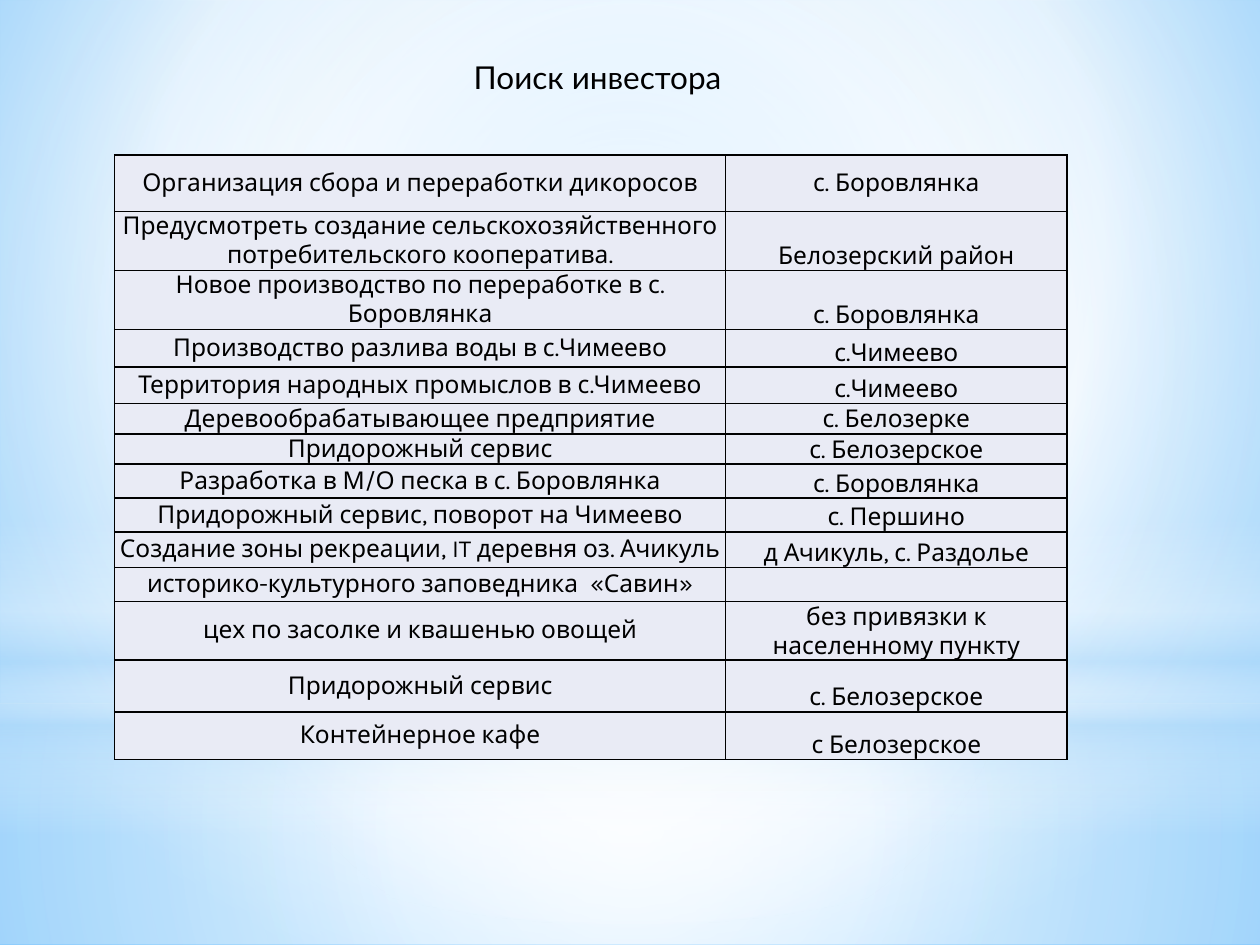
from lxml import etree
from pptx import Presentation
from pptx.dml.color import RGBColor
from pptx.enum.shapes import MSO_SHAPE
from pptx.enum.text import MSO_ANCHOR, MSO_AUTO_SIZE, PP_ALIGN
from pptx.oxml.ns import qn
from pptx.util import Pt

RECTANGLE, OVAL = MSO_SHAPE.RECTANGLE, MSO_SHAPE.OVAL
TOP, MIDDLE, BOTTOM = MSO_ANCHOR.TOP, MSO_ANCHOR.MIDDLE, MSO_ANCHOR.BOTTOM
LEFT, CENTER = PP_ALIGN.LEFT, PP_ALIGN.CENTER
FIT_SHAPE = MSO_AUTO_SIZE.SHAPE_TO_FIT_TEXT
TITLE_ONLY = 5

WIDTH, HEIGHT = 720, 540
HORIZON = 402
MIDPOINT = (50, 50, 50, 50)
WHITE, SKY = "FFFFFF", "B4DCFA"

# Project, place, row height
PROJECTS = [
    ("Организация сбора и переработки дикоросов", "с. Боровлянка", 32.4),
    ("Предусмотреть создание сельскохозяйственного потребительского кооператива.",
     "Белозерский район", 25.2),
    ("Новое производство по переработке в с. Боровлянка", "с. Боровлянка", 20.9),
    ("Производство разлива воды в с.Чимеево", "с.Чимеево", 21.6),
    ("Территория народных промыслов в с.Чимеево", "с.Чимеево", 20.9),
    ("Деревообрабатывающее предприятие", "с. Белозерке", 17.3),
    ("Придорожный сервис", "с. Белозерское", 17.3),
    ("Разработка в М/О песка в с. Боровлянка", "с. Боровлянка", 19.4),
    ("Придорожный сервис, поворот на Чимеево", "с. Першино", 19.4),
    ("Создание зоны рекреации, IT деревня оз. Ачикуль", "д Ачикуль, с. Раздолье", 20.2),
    ("историко-культурного заповедника  «Савин»", "", 19.4),
    ("цех по засолке и квашенью овощей", "без привязки к населенному пункту", 22.3),
    ("Придорожный сервис", "с. Белозерское", 29.5),
    ("Контейнерное кафе", "с Белозерское", 27.4),
]


def color(value):
    return RGBColor.from_string(value)


def add_element(parent, tag, **attributes):
    element = etree.SubElement(parent, qn(tag))
    for name, value in attributes.items():
        element.set(name, str(value))
    return element


class SlideBuilder:
    title_font, title_size = "Lato", 18
    cell_font, cell_size = "Karla", 14
    ink, cell_fill = "000000", "E9EBF5"

    def __init__(self, slide):
        self.slide = slide

    def format_text(self, paragraph, font, size, alignment):
        paragraph.alignment = alignment
        for run in paragraph.runs:
            run.font.name = font
            run.font.size = Pt(size)
            run.font.color.rgb = color(self.ink)

    def gradient(self, fill, owner, stops, center=None):
        """Stops are (position, colour, opacity) in percent; no center means top to bottom."""
        fill.solid()
        fill.fore_color.rgb = color(WHITE)
        solid = owner.find(".//" + qn("a:solidFill"))
        gradient = etree.Element(qn("a:gradFill"), rotWithShape="1")
        stop_list = add_element(gradient, "a:gsLst")
        for position, value, opacity in stops:
            stop = add_element(stop_list, "a:gs", pos=position * 1000)
            stop_color = add_element(stop, "a:srgbClr", val=value)
            if opacity < 100:
                add_element(stop_color, "a:alpha", val=opacity * 1000)
        if center:
            circle = add_element(gradient, "a:path", path="circle")
            sides = {side: share * 1000 for side, share in zip("ltrb", center)}
            add_element(circle, "a:fillToRect", **sides)
        else:
            add_element(gradient, "a:lin", ang=90 * 60000, scaled=0)
        solid.getparent().replace(solid, gradient)

    def background(self, stops, center):
        self.gradient(self.slide.background.fill, self.slide.element, stops, center)

    def glow(self, kind, top, height, stops, center=None):
        shape = self.slide.shapes.add_shape(kind, 0, Pt(top), Pt(WIDTH), Pt(height))
        shape.shadow.inherit = False
        shape.line.fill.background()
        self.gradient(shape.fill, shape.element, stops, center)

    def title(self, text, left, top, width, height):
        title = self.slide.shapes.title
        title.left, title.top, title.width, title.height = map(Pt, (left, top, width, height))
        frame = title.text_frame
        frame.text = text
        frame.word_wrap = False
        frame.auto_size = FIT_SHAPE
        frame.vertical_anchor = TOP
        self.format_text(frame.paragraphs[0], self.title_font, self.title_size, LEFT)
        # Bring the title in front of the glows
        title.element.getparent().append(title.element)

    def cell(self, cell, text, anchor):
        cell.text = text
        cell.vertical_anchor = anchor
        cell.margin_left = cell.margin_right = cell.margin_top = cell.margin_bottom = 0
        paragraph = cell.text_frame.paragraphs[0]
        self.format_text(paragraph, self.cell_font, self.cell_size, CENTER)
        if not text:
            add_element(paragraph._p, "a:endParaRPr", sz=self.cell_size * 100)
        # Borders come before the fill in the cell properties
        properties = cell._tc.get_or_add_tcPr()
        for side in ("a:lnL", "a:lnR", "a:lnT", "a:lnB"):
            line = add_element(properties, side, w=Pt(1))
            add_element(add_element(line, "a:solidFill"), "a:srgbClr", val=self.ink)
        cell.fill.solid()
        cell.fill.fore_color.rgb = color(self.cell_fill)

    def table(self, rows, left, top, column_widths):
        height = sum(row[-1] for row in rows)
        frame = self.slide.shapes.add_table(
            len(rows), len(column_widths), Pt(left), Pt(top), Pt(sum(column_widths)), Pt(height))
        table = frame.table
        table.first_row = table.horz_banding = False
        for column, width in zip(table.columns, column_widths):
            column.width = Pt(width)
        for index, (project, place, row_height) in enumerate(rows):
            table.rows[index].height = Pt(row_height)
            self.cell(table.cell(index, 0), project, MIDDLE)
            self.cell(table.cell(index, 1), place, BOTTOM if index else MIDDLE)


def main():
    presentation = Presentation()
    presentation.slide_width, presentation.slide_height = Pt(WIDTH), Pt(HEIGHT)
    slide = presentation.slides.add_slide(presentation.slide_layouts[TITLE_ONLY])
    builder = SlideBuilder(slide)

    # Sky background with soft glows
    builder.background([(0, "9ED5FF", 100), (60, WHITE, 100), (100, "5BB9FF", 100)],
                       (20, 10, 20, 60))
    builder.glow(RECTANGLE, HORIZON, HEIGHT - HORIZON,
                 [(0, WHITE, 91), (37, WHITE, 76), (100, SKY, 79)], MIDPOINT)
    builder.glow(RECTANGLE, 0, HORIZON,
                 [(0, WHITE, 89), (48, WHITE, 62), (100, SKY, 79)], MIDPOINT)
    builder.glow(RECTANGLE, 297, 180,
                 [(0, WHITE, 0), (29, WHITE, 30), (45, SKY, 40),
                  (55, WHITE, 26), (65, SKY, 60), (100, WHITE, 0)])
    builder.glow(OVAL, 126, HORIZON, [(0, WHITE, 100), (56, WHITE, 0)], MIDPOINT)

    # Title and project table
    builder.title("Поиск инвестора", 263.5, 29.5, 156.2, 29)
    builder.table(PROJECTS, 65.5, 88.5, (349.2, 195.1))

    presentation.save("out.pptx")


if __name__ == "__main__":
    main()
